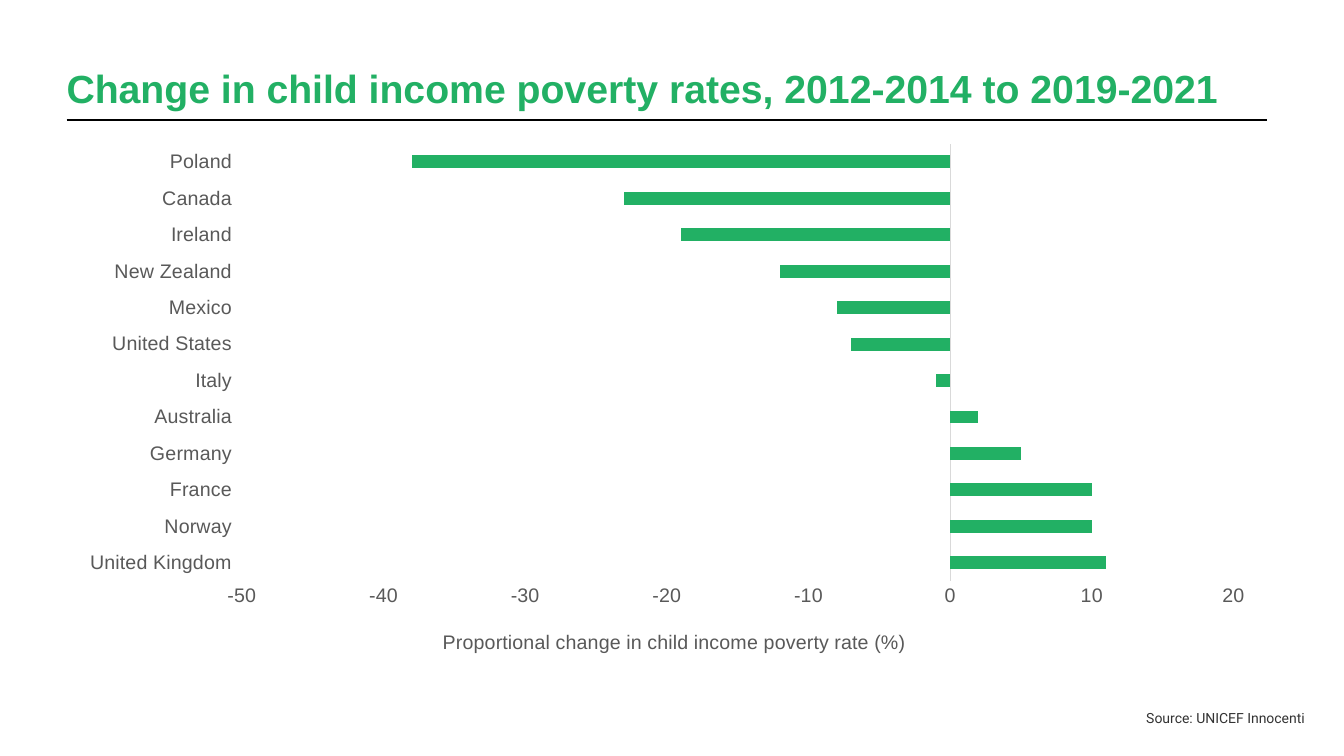
import pptx
import pptx.chart.data
import pptx.dml.color
import pptx.enum.chart
import pptx.enum.shapes
import pptx.enum.text
import pptx.oxml
import pptx.oxml.ns
import pptx.util

Inches, Pt = pptx.util.Inches, pptx.util.Pt
RGBColor = pptx.dml.color.RGBColor
qn = pptx.oxml.ns.qn

GREEN = RGBColor(0x22, 0xB0, 0x64)
BLACK = RGBColor(0x00, 0x00, 0x00)
DARK_GREY = RGBColor(0x33, 0x33, 0x33)
GREY = RGBColor(0x59, 0x59, 0x59)
LIGHT_GREY = RGBColor(0xD9, 0xD9, 0xD9)

# Countries and their change in per cent, from the bottom bar to the top one
POVERTY_CHANGE = {
    "United Kingdom": 11, "Norway": 10, "France": 10, "Germany": 5,
    "Australia": 2, "Italy": -1, "United States": -7, "Mexico": -8,
    "New Zealand": -12, "Ireland": -19, "Canada": -23, "Poland": -38,
}


def set_all(target, values):
    for name, value in values.items():
        setattr(target, name, value)


def place(parent, index, **fractions):
    """Give a chart part a manual layout, in fractions of the chart."""
    for old in parent.findall(qn("c:layout")):
        parent.remove(old)
    modes = "".join(f'<c:{axis}Mode val="edge"/>' for axis in "xy")
    if "w" in fractions:
        modes = '<c:layoutTarget val="inner"/>' + modes
    sizes = "".join(f'<c:{key} val="{value}"/>' for key, value in fractions.items())
    parent.insert(index, pptx.oxml.parse_xml(
        f'<c:layout {pptx.oxml.ns.nsdecls("c")}><c:manualLayout>'
        f"{modes}{sizes}</c:manualLayout></c:layout>"))


class Slide:
    font = "Arial"
    label_size = Pt(14)

    def __init__(self, deck):
        self.slide = deck.slides.add_slide(deck.slide_layouts[6])

    def style(self, font, color, **values):
        set_all(font, {"name": self.font, "size": self.label_size, **values})
        font.color.rgb = color

    def text(self, words, box, color, frame_format, **font_format):
        frame = self.slide.shapes.add_textbox(*map(Inches, box)).text_frame
        set_all(frame, {"word_wrap": True, **frame_format})
        paragraph = frame.paragraphs[0]
        run = paragraph.add_run()
        run.text = words
        self.style(run.font, color, **font_format)
        return paragraph

    def rule(self, left, right, y, color, width):
        line = self.slide.shapes.add_connector(
            pptx.enum.shapes.MSO_CONNECTOR.STRAIGHT,
            *map(Inches, (left, y, right, y)))
        line.line.color.rgb = color
        line.line.width = Pt(width)
        line._element.spPr.append(
            pptx.oxml.parse_xml(f'<a:effectLst {pptx.oxml.ns.nsdecls("a")}/>'))

    def bar_chart(self, values, box, axis_caption):
        data = pptx.chart.data.CategoryChartData()
        data.categories = list(values)
        data.add_series("Series 1", list(values.values()))
        chart = self.slide.shapes.add_chart(
            pptx.enum.chart.XL_CHART_TYPE.BAR_CLUSTERED,
            *map(Inches, box), data).chart
        set_all(chart, {"has_legend": False, "has_title": False})
        self.style(chart.font, BLACK, size=Pt(10))

        # Bars
        plot = chart.plots[0]
        set_all(plot, {"gap_width": 182, "vary_by_categories": False})
        bars = plot.series[0]
        bars.invert_if_negative = False
        bars.format.fill.solid()
        bars.format.fill.fore_color.rgb = GREEN

        # Axes
        countries, percent = chart.category_axis, chart.value_axis
        no_tick = pptx.enum.chart.XL_TICK_MARK.NONE
        for axis in (countries, percent):
            set_all(axis, {"has_major_gridlines": False,
                           "major_tick_mark": no_tick,
                           "minor_tick_mark": no_tick})
            self.style(axis.tick_labels.font, GREY)
        countries.tick_label_position = pptx.enum.chart.XL_TICK_LABEL_POSITION.LOW
        countries.format.line.color.rgb = LIGHT_GREY
        countries.format.line.width = Pt(0.75)
        set_all(percent, {"minimum_scale": -50, "maximum_scale": 20,
                          "major_unit": 10})
        percent.format.line.fill.background()

        # Axis caption
        caption = percent.axis_title
        run = caption.text_frame.paragraphs[0].add_run()
        run.text = axis_caption
        self.style(run.font, GREY, bold=False)

        place(caption._element, 1, x=0.31, y=0.92)
        place(plot._element.getparent(), 0, x=0.146, y=0.02, w=0.825, h=0.817)


def main():
    deck = pptx.Presentation()
    set_all(deck, {"slide_width": Inches(13.33), "slide_height": Inches(7.5)})
    page = Slide(deck)

    # Heading
    page.rule(0.66, 12.57, 1.19, BLACK, 2)
    heading = page.text(
        "Change in child income poverty rates, 2012-2014 to 2019-2021",
        (0.66, 0.61, 11.92, 0.55), GREEN,
        {"margin_left": 0, "vertical_anchor": pptx.enum.text.MSO_ANCHOR.BOTTOM},
        size=Pt(28), bold=True)
    heading.line_spacing = 0.9

    # Source
    page.text("Source:\u00a0UNICEF Innocenti".replace("\u00a0", " "),
              (11.27, 6.99, 1.82, 0.27), DARK_GREY,
              {"auto_size": pptx.enum.text.MSO_AUTO_SIZE.SHAPE_TO_FIT_TEXT},
              name="Roboto", size=Pt(10))

    # Chart
    page.bar_chart(POVERTY_CHANGE, (0.66, 1.32, 11.92, 5.31),
                   "Proportional change in child income poverty rate (%)")

    deck.save("out.pptx")


if __name__ == "__main__":
    main()
